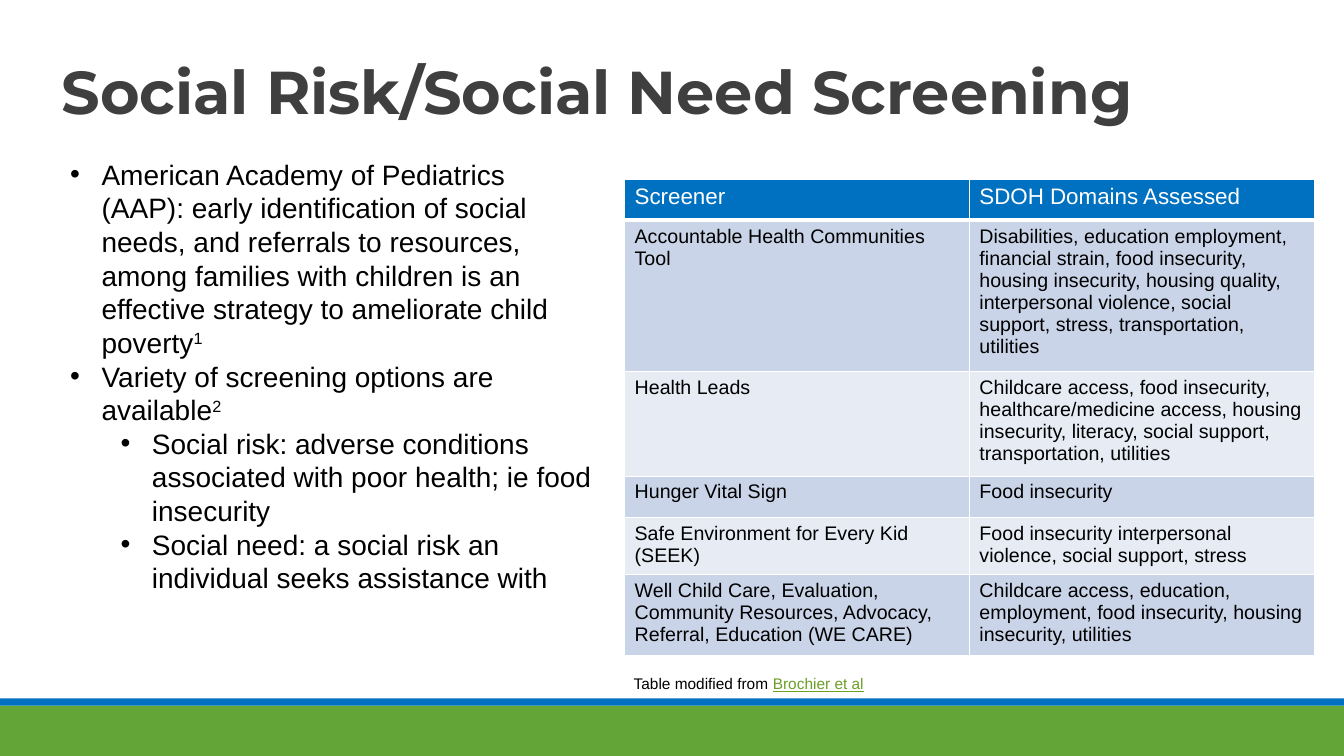
from dataclasses import dataclass

from lxml.etree import SubElement
from pptx import Presentation
from pptx.dml.color import RGBColor
from pptx.enum.shapes import MSO_SHAPE
from pptx.enum.text import MSO_ANCHOR
from pptx.oxml.ns import qn
from pptx.util import Cm, Pt


@dataclass(frozen=True)
class Theme:
    font: str = "Arial"
    title_font: str = "Montserrat"
    text: str = "000000"
    title: str = "3F3F3F"
    white: str = "FFFFFF"
    blue: str = "0070C0"
    green: str = "63A537"
    link: str = "6B9F25"
    bands: tuple = ("CAD4E8", "E6EBF4")
    title_size: float = 43.2
    body_size: float = 20
    head_size: float = 16
    cell_size: float = 14
    note_size: float = 11


THEME = Theme()
WIDTH, HEIGHT = 33.87, 19.05

# Level, text and reference number of each bullet
BULLETS = [
    (0, "American Academy of Pediatrics (AAP): early identification of social needs, "
        "and referrals to resources, among families with children is an effective "
        "strategy to ameliorate child poverty", "1"),
    (0, "Variety of screening options are available", "2"),
    (1, "Social risk: adverse conditions associated with poor health; ie food insecurity", ""),
    (1, "Social need: a social risk an individual seeks assistance with", ""),
]

# Row height in cm, screener, domains
SCREENERS = [
    (1.02, "Screener", "SDOH Domains Assessed"),
    (3.82, "Accountable Health Communities Tool",
     "Disabilities, education employment, financial strain, food insecurity, housing "
     "insecurity, housing quality, interpersonal violence, social support, stress, "
     "transportation, utilities"),
    (2.62, "Health Leads",
     "Childcare access, food insecurity, healthcare/medicine access, housing "
     "insecurity, literacy, social support, transportation, utilities"),
    (1.04, "Hunger Vital Sign", "Food insecurity"),
    (1.44, "Safe Environment for Every Kid (SEEK)",
     "Food insecurity interpersonal violence, social support, stress"),
    (2.04, "Well Child Care, Evaluation, Community Resources, Advocacy, Referral, "
           "Education (WE CARE)",
     "Childcare access, education, employment, food insecurity, housing insecurity, utilities"),
]


def rgb(color):
    return RGBColor.from_string(color)


def add_run(p, text, size, color=THEME.text, font=THEME.font, bold=False):
    r = p.add_run()
    r.text = text
    r.font.size = Pt(size)
    r.font.name = font
    r.font.bold = bold
    r.font.color.rgb = rgb(color)
    return r


def add_text_frame(s, x, y, w, h):
    tf = s.shapes.add_textbox(Cm(x), Cm(y), Cm(w), Cm(h)).text_frame
    tf.word_wrap = True
    return tf


def add_footer_bands(s, y, h, stripe):
    """Green band at y with a thin blue stripe on top of it."""
    for top, height, color in ((y, h, THEME.green), (y - stripe, stripe, THEME.blue)):
        sp = s.shapes.add_shape(MSO_SHAPE.RECTANGLE, 0, Cm(top), Cm(WIDTH), Cm(height))
        sp.shadow.inherit = False
        sp.fill.solid()
        sp.fill.fore_color.rgb = rgb(color)
        sp.line.fill.background()


def set_title(s, text, x, y, w, h):
    sp = s.shapes.title
    sp.left, sp.top, sp.width, sp.height = Cm(x), Cm(y), Cm(w), Cm(h)
    tf = sp.text_frame
    tf.word_wrap = True
    tf.vertical_anchor = MSO_ANCHOR.BOTTOM
    p = tf.paragraphs[0]
    p.line_spacing = 0.85
    pPr = p._p.get_or_add_pPr()
    pPr.set("algn", "l")
    add_run(p, text, THEME.title_size, THEME.title, THEME.title_font, bold=True)


def set_bullet(p, level):
    p.level = level
    pPr = p._p.get_or_add_pPr()
    pPr.set("marL", str(Cm(0.79 + 1.27 * level)))
    pPr.set("indent", str(-Cm(0.79)))
    SubElement(pPr, qn("a:buFont"), typeface=THEME.font)
    SubElement(pPr, qn("a:buChar"), char="•")


def add_bullets(s, bullets, x, y, w, h):
    tf = add_text_frame(s, x, y, w, h)
    for i, (level, text, reference) in enumerate(bullets):
        p = tf.add_paragraph() if i else tf.paragraphs[0]
        set_bullet(p, level)
        add_run(p, text, THEME.body_size)
        if reference:
            r = add_run(p, reference, THEME.body_size)
            r._r.get_or_add_rPr().set("baseline", "30000")


def set_borders(cell, bottom):
    """White 1 pt cell borders, with the given bottom width in points."""
    tcPr = cell._tc.get_or_add_tcPr()
    for side, width in (("L", 1), ("R", 1), ("T", 1), ("B", bottom)):
        ln = SubElement(tcPr, qn(f"a:ln{side}"), w=str(Pt(width)))
        SubElement(SubElement(ln, qn("a:solidFill")), qn("a:srgbClr"), val=THEME.white)


def add_screener_table(s, rows, x, y, w):
    h = sum(row[0] for row in rows)
    table = s.shapes.add_table(len(rows), 2, Cm(x), Cm(y), Cm(w), Cm(h)).table
    for i, (height, *texts) in enumerate(rows):
        table.rows[i].height = Cm(height)
        header = i == 0
        fill = THEME.blue if header else THEME.bands[(i - 1) % 2]
        color = THEME.white if header else THEME.text
        size = THEME.head_size if header else THEME.cell_size
        for j, text in enumerate(texts):
            cell = table.cell(i, j)
            set_borders(cell, bottom=3 if header else 1)
            cell.fill.solid()
            cell.fill.fore_color.rgb = rgb(fill)
            add_run(cell.text_frame.paragraphs[0], text, size, color)


def add_source_note(s, x, y, w, h):
    p = add_text_frame(s, x, y, w, h).paragraphs[0]
    add_run(p, "Table modified from ", THEME.note_size)
    add_run(p, "Brochier et al", THEME.note_size, THEME.link).font.underline = True


def main():
    prs = Presentation()
    prs.slide_width, prs.slide_height = Cm(WIDTH), Cm(HEIGHT)
    s = prs.slides.add_slide(prs.slide_layouts[5])
    add_footer_bands(s, y=17.78, h=1.27, stripe=0.18)
    set_title(s, "Social Risk/Social Need Screening", 1.3, 1.04, 30.9, 2.29)
    add_bullets(s, BULLETS, 1.52, 3.84, 13.72, 11.38)
    add_source_note(s, 15.72, 16.87, 10.8, 0.74)
    add_screener_table(s, SCREENERS, 15.74, 4.53, 17.38)
    prs.save("out.pptx")


if __name__ == "__main__":
    main()
